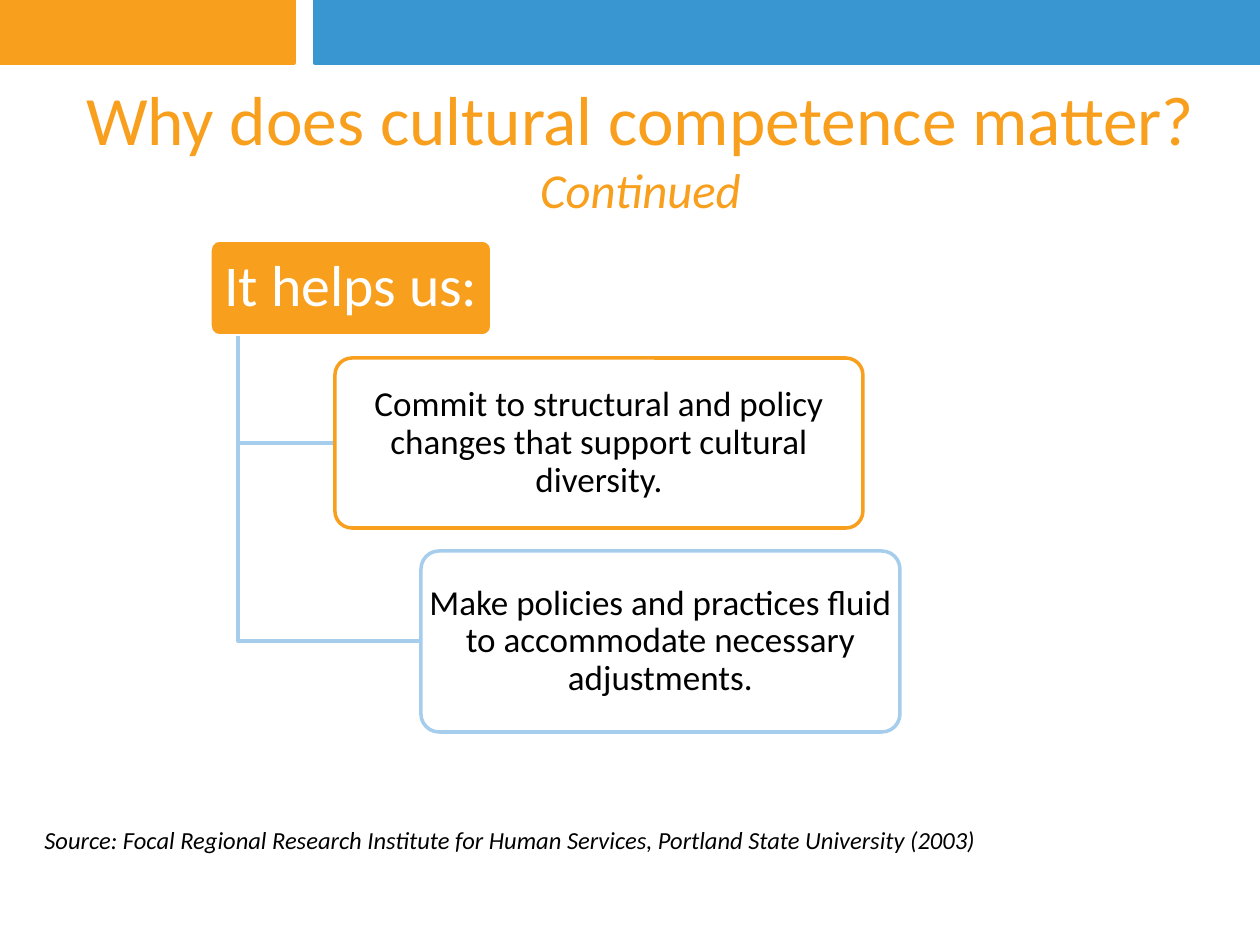
from dataclasses import dataclass

from pptx import Presentation
from pptx.dml.color import RGBColor
from pptx.enum.shapes import MSO_SHAPE
from pptx.enum.text import MSO_ANCHOR, PP_ALIGN
from pptx.oxml.ns import qn
from pptx.oxml.xmlchemy import OxmlElement
from pptx.shapes.autoshape import Shape
from pptx.slide import Slide
from pptx.util import Emu, Pt

RECT, ROUNDED = MSO_SHAPE.RECTANGLE, MSO_SHAPE.ROUNDED_RECTANGLE
TOP, MIDDLE = MSO_ANCHOR.TOP, MSO_ANCHOR.MIDDLE
LEFT, CENTER = PP_ALIGN.LEFT, PP_ALIGN.CENTER
EMU_PER_PX = 914400 / 126


@dataclass(frozen=True)
class Theme:
    font: str = "Calibri"
    orange: str = "F89F1E"
    blue: str = "3A96D0"
    pale_blue: str = "A7CDED"
    white: str = "FFFFFF"
    black: str = "000000"
    title_size: float = 39.6
    subtitle_size: float = 27.9
    heading_size: float = 33
    item_size: float = 20
    source_size: float = 14
    line_width: float = 2
    item_opacity: int = 90


THEME = Theme()


@dataclass(frozen=True)
class Area:
    left: int
    top: int
    width: int
    height: int


@dataclass(frozen=True)
class Span:
    text: str
    size: float
    color: str
    italic: bool = False


@dataclass(frozen=True)
class Panel:
    area: Area
    fill: str
    line: str
    kind: int = RECT
    opacity: int = 100
    span: Span | None = None


def px(value: int) -> Emu:
    return Emu(round(value * EMU_PER_PX))


def place(area: Area) -> tuple[Emu, ...]:
    return px(area.left), px(area.top), px(area.width), px(area.height)


def set_line(shape: Shape, color: str) -> None:
    shape.line.color.rgb = RGBColor.from_string(color)
    shape.line.width = Pt(THEME.line_width)


def write(box: Shape, spans: list[Span], align: int, anchor: int,
          spacing: float = 1.0) -> None:
    frame = box.text_frame
    frame.word_wrap = True
    frame.vertical_anchor = anchor
    para = frame.paragraphs[0]
    para.alignment = align
    para.line_spacing = spacing
    for span in spans:
        run = para.add_run()
        run.text = span.text
        run.font.name = THEME.font
        run.font.size = Pt(span.size)
        run.font.italic = span.italic
        run.font.color.rgb = RGBColor.from_string(span.color)


def add_panel(page: Slide, panel: Panel) -> None:
    shape = page.shapes.add_shape(panel.kind, *place(panel.area))
    shape.shadow.inherit = False
    shape.fill.solid()
    shape.fill.fore_color.rgb = RGBColor.from_string(panel.fill)
    set_line(shape, panel.line)
    if panel.kind == ROUNDED:
        shape.adjustments[0] = 0.1
    if panel.opacity < 100:
        alpha = OxmlElement("a:alpha")
        alpha.set("val", str(panel.opacity * 1000))
        shape.fill._xPr.find(".//" + qn("a:srgbClr")).append(alpha)
    if panel.span:
        frame = shape.text_frame
        frame.margin_left = frame.margin_right = 0
        frame.margin_top = frame.margin_bottom = 0
        write(shape, [panel.span], CENTER, MIDDLE, 0.9)


def add_text(page: Slide, area: Area, spans: list[Span], align: int, anchor: int) -> None:
    write(page.shapes.add_textbox(*place(area)), spans, align, anchor)


def add_branch(page: Slide, heading: Area, item: Area) -> None:
    """Run down from the heading, then right to the middle of the item."""
    trunk = heading.left + heading.width // 10
    start = heading.top + heading.height
    middle = item.top + item.height // 2
    builder = page.shapes.build_freeform(trunk, start, scale=EMU_PER_PX)
    builder.add_line_segments([(trunk, middle), (item.left, middle)], close=False)
    branch = builder.convert_to_shape()
    branch.shadow.inherit = False
    branch.fill.background()
    set_line(branch, THEME.pale_blue)


BANDS = [
    Panel(Area(0, 0, 294, 63), THEME.orange, THEME.orange),
    Panel(Area(315, 0, 945, 63), THEME.blue, THEME.blue),
]
TITLE = [
    Span("Why does cultural competence matter? ", THEME.title_size, THEME.orange),
    Span("Continued", THEME.subtitle_size, THEME.orange, italic=True),
]
SOURCE = Span(
    "Source: Focal Regional Research Institute for Human Services, "
    "Portland State University (2003)",
    THEME.source_size, THEME.black, italic=True)
HEADING = Panel(Area(210, 240, 282, 96), THEME.orange, THEME.white, ROUNDED,
                span=Span("It helps us:", THEME.heading_size, THEME.white))
ITEMS = [
    Panel(area, THEME.white, line, ROUNDED, THEME.item_opacity,
          Span(text, THEME.item_size, THEME.black))
    for area, line, text in [
        (Area(335, 358, 528, 170), THEME.orange,
         "Commit to structural and policy changes that support cultural diversity."),
        (Area(421, 551, 479, 181), THEME.pale_blue,
         "Make policies and practices fluid to accommodate necessary adjustments."),
    ]
]


def main() -> None:
    deck = Presentation()
    deck.slide_width, deck.slide_height = px(1260), px(945)
    page = deck.slides.add_slide(deck.slide_layouts[6])

    # Bands along the top
    for band in BANDS:
        add_panel(page, band)

    # Title and source
    add_text(page, Area(42, 63, 1197, 168), TITLE, CENTER, MIDDLE)
    add_text(page, Area(32, 819, 977, 42), [SOURCE], LEFT, TOP)

    # Heading with its branching items
    add_panel(page, HEADING)
    for item in ITEMS:
        add_branch(page, HEADING.area, item.area)
        add_panel(page, item)

    deck.save("out.pptx")


if __name__ == "__main__":
    main()
